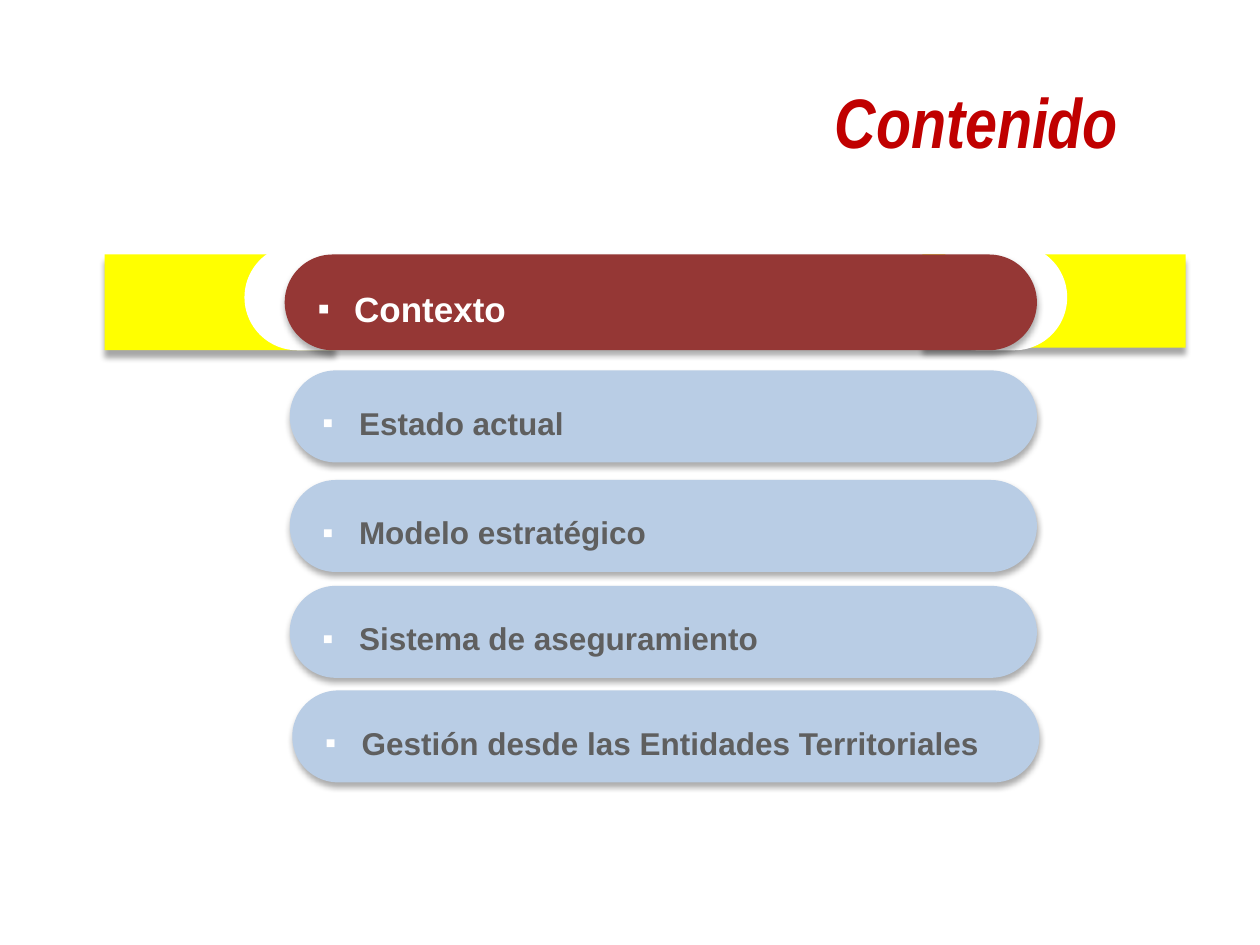
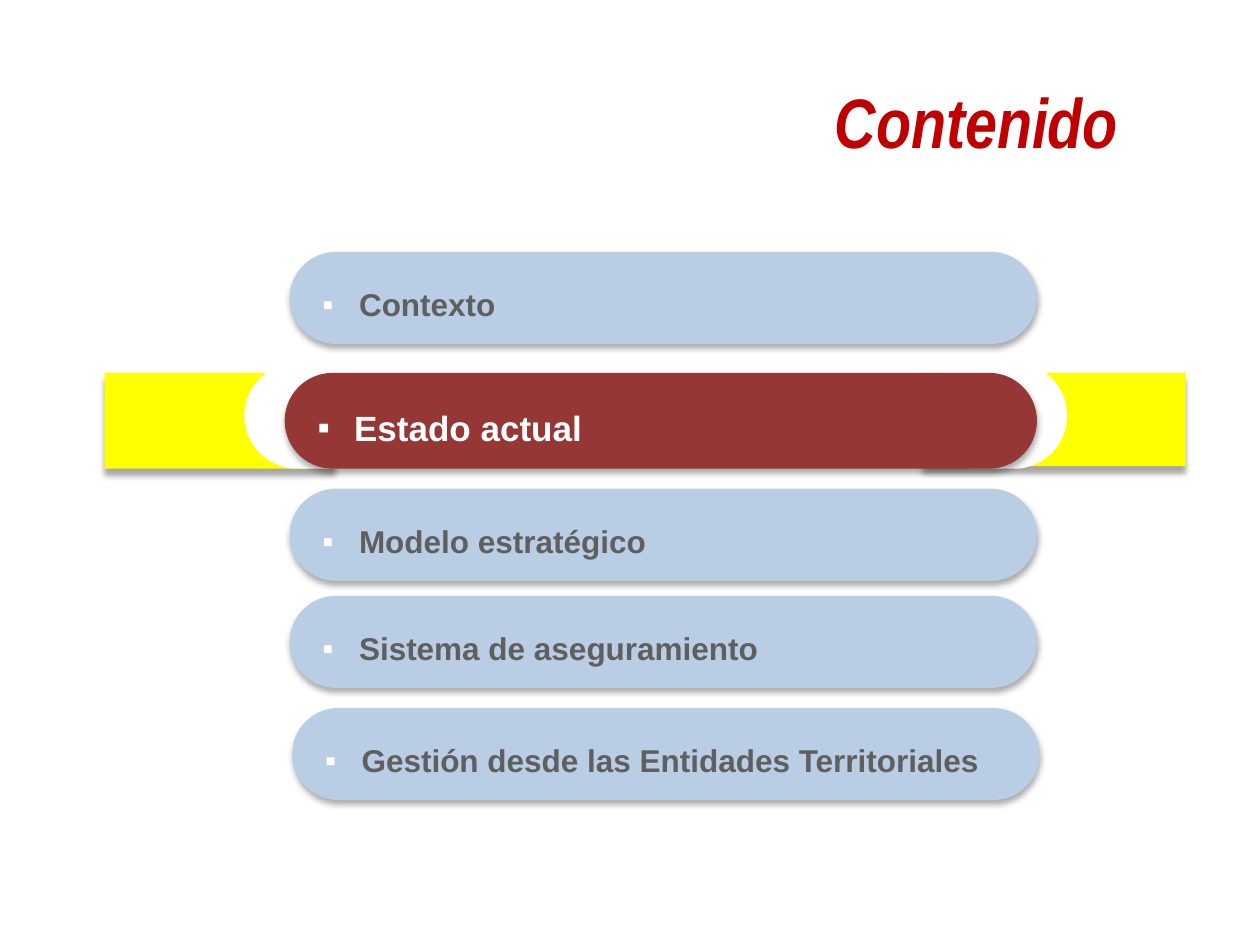
from lxml import etree
from pptx import Presentation
from pptx.dml.color import RGBColor
from pptx.enum.shapes import MSO_SHAPE as SHAPE
from pptx.enum.text import MSO_ANCHOR as ANCHOR, PP_ALIGN as ALIGN
from pptx.oxml.ns import qn
from pptx.util import Inches, Pt

# Content: the agenda, and per slide the active item and the top of each pill
TITLE = "Contenido"
ITEMS = ["Contexto", "Estado actual", "Modelo estratégico",
         "Sistema de aseguramiento", "Gestión desde las Entidades Territoriales"]
SLIDES = [
    {"active": 0, "tops": [2.02, 2.94, 3.81, 4.65, 5.48]},
    {"active": 1, "tops": [2, 2.96, 3.88, 4.73, 5.62]},
]

# Shared style
COLORS = {"title": "C00000", "band": "FFFF00", "white": "FFFFFF", "active": "953735",
          "idle": "B9CDE5", "idle_text": "5F5F5F", "shadow": "000000"}
PILL_SHADOW = {"alpha": 32, "blur": 3.5, "dist": 2.2}
BAND_SHADOW = {"alpha": 34, "blur": 3.5, "dist": 4}
IDLE = {"left": 2.3, "width": 5.93, "height": 0.73, "fill": "idle"}
ACTIVE = {"left": 2.26, "width": 5.97, "height": 0.76, "fill": "active"}
LAST_SHIFT = 0.02
TEXT_INSET = 0.26
BULLET_INDENT = 0.29
# Highlight band: shape, left, offset from the pill top, width, height, fill, shadow
BAND = [
    (SHAPE.RECTANGLE, 7.32, 0, 2.09, 0.74, "band", BAND_SHADOW),
    (SHAPE.ROUNDED_RECTANGLE, 7.33, -0.08, 1.14, 0.84, "white", None),
    (SHAPE.RECTANGLE, 0.83, 0, 1.83, 0.76, "band", BAND_SHADOW),
    (SHAPE.ROUNDED_RECTANGLE, 1.94, -0.08, 1.21, 0.84, "white", None),
]


def rgb(name):
    return RGBColor.from_string(COLORS[name])


def add_child(parent, tag, **attrs):
    return etree.SubElement(parent, qn(tag), {k: str(v) for k, v in attrs.items()})


def add_shadow(sp, alpha, blur, dist):
    effects = sp._element.spPr.find(qn("a:effectLst"))
    outer = add_child(effects, "a:outerShdw", blurRad=Pt(blur), dist=Pt(dist),
                      dir=90 * 60000, algn="t", rotWithShape=0)
    color = add_child(outer, "a:srgbClr", val=COLORS["shadow"])
    add_child(color, "a:alpha", val=alpha * 1000)


def add_block(s, kind, left, top, width, height, fill, shadow=None):
    sp = s.shapes.add_shape(kind, *map(Inches, (left, top, width, height)))
    if kind == SHAPE.ROUNDED_RECTANGLE:
        sp.adjustments[0] = 0.5
    sp.fill.solid()
    sp.fill.fore_color.rgb = rgb(fill)
    sp.line.fill.background()
    sp.shadow.inherit = False
    if shadow:
        add_shadow(sp, **shadow)


def add_text(s, text, box, size, color, font="Arial", italic=False,
             align=ALIGN.LEFT, bullet=None):
    tf = s.shapes.add_textbox(*map(Inches, box)).text_frame
    tf.word_wrap = True
    tf.vertical_anchor = ANCHOR.MIDDLE
    tf.margin_left = tf.margin_right = tf.margin_top = tf.margin_bottom = 0
    p = tf.paragraphs[0]
    p.alignment = align
    if bullet:
        pPr = p._p.get_or_add_pPr()
        pPr.set("marL", str(Inches(BULLET_INDENT)))
        pPr.set("indent", str(-Inches(BULLET_INDENT)))
        add_child(add_child(pPr, "a:buClr"), "a:srgbClr", val=COLORS["white"])
        add_child(pPr, "a:buFont", typeface="Arial")
        add_child(pPr, "a:buChar", char=bullet)
    r = p.add_run()
    r.text = text
    r.font.name, r.font.size = font, Pt(size)
    r.font.bold, r.font.italic = True, italic
    r.font.color.rgb = rgb(color)


def add_item(s, text, top, style, size, color, shift=0):
    left, width, height = style["left"] + shift, style["width"], style["height"]
    add_block(s, SHAPE.ROUNDED_RECTANGLE, left, top, width, height,
              style["fill"], PILL_SHADOW)
    text_height = size / 60
    text_top = top + (height - text_height) / 2 + 0.05
    add_text(s, text, (left + TEXT_INSET, text_top, width - TEXT_INSET, text_height),
             size, color, bullet="▪")


def add_agenda(prs, active, tops):
    s = prs.slides.add_slide(prs.slide_layouts[6])
    add_text(s, TITLE, (5.52, 0.68, 4.46, 0.55), 40, "title",
             font="Arial Narrow", italic=True, align=ALIGN.CENTER)
    # Idle pills
    for i, (text, top) in enumerate(zip(ITEMS, tops)):
        if i != active:
            shift = LAST_SHIFT if i == len(ITEMS) - 1 else 0
            add_item(s, text, top, IDLE, 18, "idle_text", shift)
    # Highlight band and active pill
    top = tops[active]
    for kind, left, offset, width, height, fill, shadow in BAND:
        add_block(s, kind, left, top + offset, width, height, fill, shadow)
    add_item(s, ITEMS[active], top, ACTIVE, 20, "white")


def main():
    prs = Presentation()
    prs.slide_width, prs.slide_height = Inches(10), Inches(7.5)
    for slide in SLIDES:
        add_agenda(prs, **slide)
    prs.save("out.pptx")


if __name__ == "__main__":
    main()
